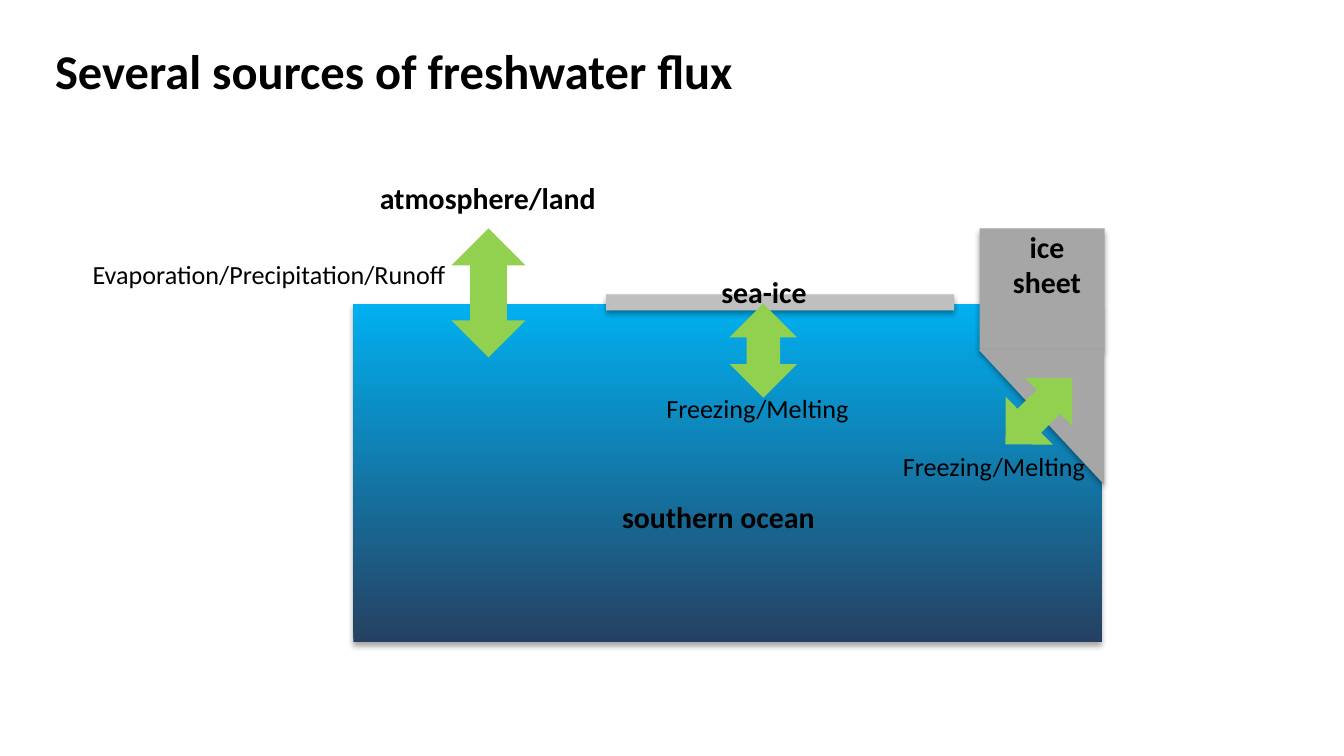
from lxml import etree
from pptx import Presentation
from pptx.dml.color import RGBColor
from pptx.enum.shapes import MSO_SHAPE
from pptx.enum.text import MSO_ANCHOR, PP_ALIGN
from pptx.oxml.ns import qn
from pptx.util import Inches, Pt

RECT, TRIANGLE = MSO_SHAPE.RECTANGLE, MSO_SHAPE.ISOSCELES_TRIANGLE
ARROW = MSO_SHAPE.UP_DOWN_ARROW
LEFT, CENTER = PP_ALIGN.LEFT, PP_ALIGN.CENTER
TOP, BOTTOM = MSO_ANCHOR.TOP, MSO_ANCHOR.BOTTOM

BLACK = RGBColor(0x00, 0x00, 0x00)
DEEP_WATER = RGBColor(0x25, 0x40, 0x61)
SURFACE_WATER = RGBColor(0x00, 0xB0, 0xF0)
ICE_SHEET = RGBColor(0xA6, 0xA6, 0xA6)
SEA_ICE = RGBColor(0xBF, 0xBF, 0xBF)
FLUX = RGBColor(0x92, 0xD0, 0x50)

# Content: left, top, width, height in inches
TITLE = ("Several sources of freshwater flux", (0.41, 0.36, 9.49, 0.38))
OCEAN_BOX = (2.63, 2.26, 5.57, 2.52)
ICE_SHEET_BOX = (7.29, 1.7, 0.93, 0.91)
ICE_KEEL_BOX = (7.25, 2.64, 1, 0.93)
SEA_ICE_BOX = (4.51, 2.19, 2.59, 0.12)
REGIONS = [
    ("ice sheet", (7.37, 1.65, 0.84, 0.64)),
    ("southern ocean", (4.05, 3.66, 2.59, 0.37)),
    ("sea-ice", (4.61, 1.99, 2.15, 0.37)),
    ("atmosphere/land", (2.61, 1.29, 2.04, 0.37)),
]
# Each flux: label, label box, arrow box, arrow rotation
FLUXES = [
    ("Evaporation/Precipitation/Runoff", (0.59, 1.87, 3.31, 0.34),
     (3.36, 1.7, 0.55, 0.96), 0),
    ("Freezing/Melting", (4.86, 2.87, 1.62, 0.34),
     (5.43, 2.26, 0.5, 0.7), 0),
    ("Freezing/Melting", (6.62, 3.3, 1.63, 0.34),
     (7.48, 2.71, 0.5, 0.7), 225.3),
]

# Widescreen 16:9 slide
prs = Presentation()
prs.slide_width = Inches(10)
prs.slide_height = prs.slide_width * 9 // 16
s = prs.slides.add_slide(prs.slide_layouts[6])


def add_text(text, box, size=14, bold=False, align=LEFT, anchor=TOP,
             inset=(0.1, 0.05)):
    tf = s.shapes.add_textbox(*map(Inches, box)).text_frame
    tf.word_wrap = True
    tf.vertical_anchor = anchor
    tf.margin_left = tf.margin_right = Inches(inset[0])
    tf.margin_top = tf.margin_bottom = Inches(inset[1])
    p = tf.paragraphs[0]
    p.alignment = align
    r = p.add_run()
    r.text = text
    r.font.name, r.font.size, r.font.bold = "Calibri", Pt(size), bold
    r.font.color.rgb = BLACK


def add_shape(kind, box, color=None, rotation=0, shadow=False):
    sp = s.shapes.add_shape(kind, *map(Inches, box))
    sp.rotation = rotation
    sp.line.fill.background()
    if color is not None:
        sp.fill.solid()
        sp.fill.fore_color.rgb = color
    else:
        # Water gets lighter from the bottom up
        sp.fill.gradient()
        sp.fill.gradient_angle = 90
        for stop, shade in zip(sp.fill.gradient_stops,
                               (DEEP_WATER, SURFACE_WATER)):
            stop.color.rgb = shade
    sp.shadow.inherit = False
    if shadow:
        effects = sp._element.spPr.find(qn("a:effectLst"))
        outer = etree.SubElement(effects, qn("a:outerShdw"),
                                 blurRad=str(Pt(3.1)), dist=str(Pt(1.8)),
                                 dir="5400000", rotWithShape="0")
        clr = etree.SubElement(outer, qn("a:srgbClr"), val="000000")
        etree.SubElement(clr, qn("a:alpha"), val="35000")
    return sp


# Title
add_text(*TITLE, size=26, bold=True, anchor=BOTTOM, inset=(0, 0))

# Ocean and ice
add_shape(RECT, OCEAN_BOX, shadow=True)
add_shape(RECT, ICE_SHEET_BOX, ICE_SHEET, shadow=True)
add_shape(RECT, SEA_ICE_BOX, SEA_ICE, shadow=True)
keel = add_shape(TRIANGLE, ICE_KEEL_BOX, ICE_SHEET, rotation=90, shadow=True)
keel.adjustments[0] = 0
keel._element.spPr.find(qn("a:xfrm")).set("flipV", "1")

# Region names
for name, box in REGIONS:
    add_text(name, box, size=16, bold=True, align=CENTER)

# Freshwater fluxes
for label, label_box, arrow_box, rotation in FLUXES:
    add_shape(ARROW, arrow_box, FLUX, rotation)
    add_text(label, label_box)

prs.save("out.pptx")
